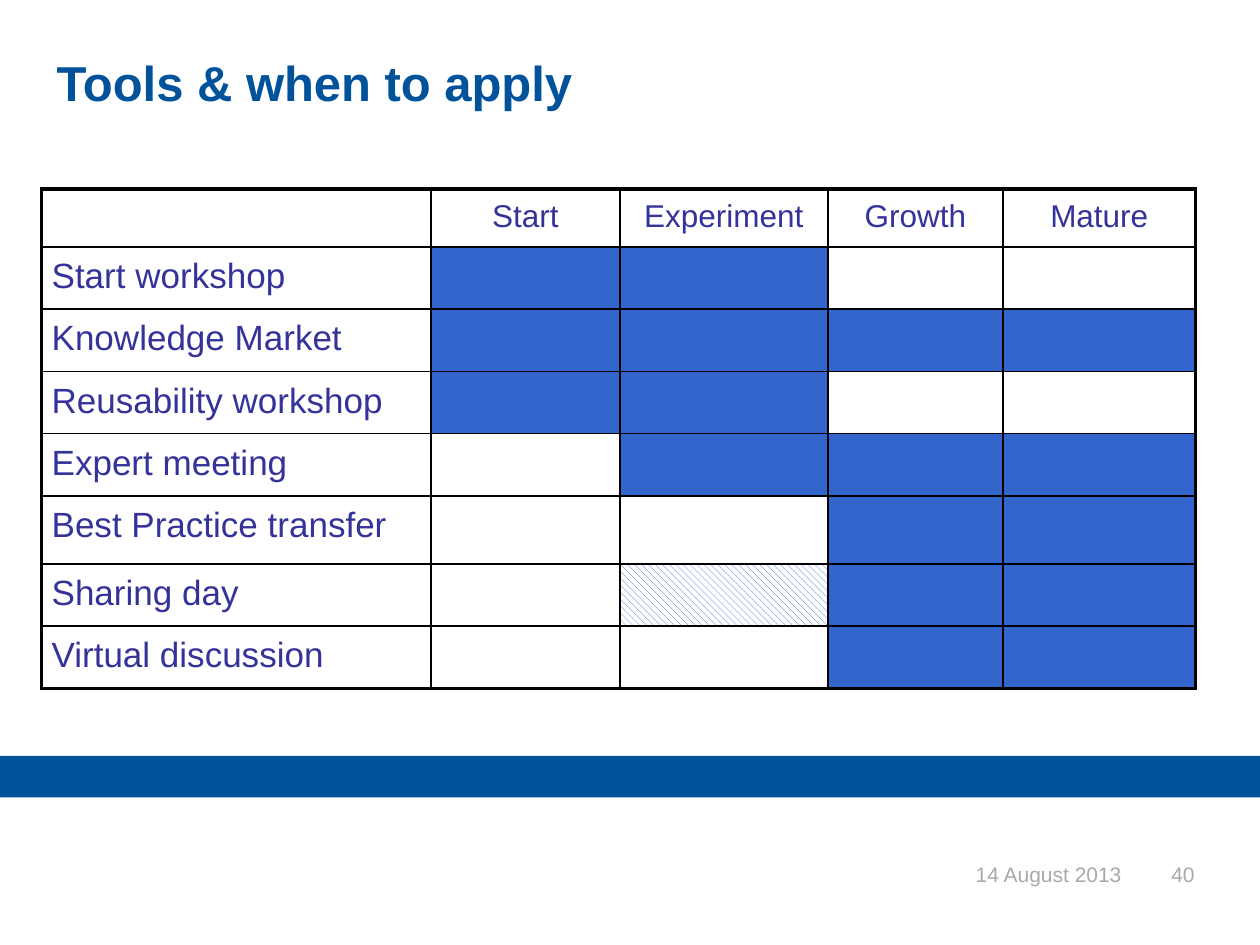
from lxml.etree import SubElement
from pptx import Presentation
from pptx.dml.color import RGBColor
from pptx.enum.dml import MSO_PATTERN
from pptx.enum.shapes import MSO_SHAPE
from pptx.enum.text import MSO_ANCHOR, MSO_AUTO_SIZE, PP_ALIGN
from pptx.oxml.ns import qn
from pptx.util import Inches, Pt

WIDTH, HEIGHT = 10, 7.5
FONT = "Arial"
COLORS = {
    "brand": "00529B",
    "footer": "A7A9AC",
    "label": "333399",
    "active": "3366CC",
    "paper": "FFFFFF",
    "border": "000000",
}
THIN, THICK = 1, 2.25

PHASES = ["Start", "Experiment", "Growth", "Mature"]
# One mark per phase: x = applies, / = applies partly, - = does not apply
TOOLS = {
    "Start workshop": "xx--",
    "Knowledge Market": "xxxx",
    "Reusability workshop": "xx--",
    "Expert meeting": "-xxx",
    "Best Practice transfer": "--xx",
    "Sharing day": "-/xx",
    "Virtual discussion": "--xx",
}
COLUMN_WIDTHS = [3.09, 1.5, 1.65, 1.39, 1.53]
HEADER_HEIGHT, ROW_HEIGHT = 0.46, 0.49
TALL_ROWS = {"Best Practice transfer": 0.54}


def color(name):
    return RGBColor.from_string(COLORS[name])


def inches(box):
    return [Inches(length) for length in box]


def write(frame, text, size, color_name, align=PP_ALIGN.LEFT, bold=False):
    frame.text = text
    para = frame.paragraphs[0]
    para.alignment = align
    font = para.runs[0].font
    font.name, font.size, font.bold = FONT, Pt(size), bold
    font.color.rgb = color(color_name)


def add_title(page, box, text):
    title = page.shapes.title
    title.left, title.top, title.width, title.height = inches(box)
    frame = title.text_frame
    frame.auto_size = MSO_AUTO_SIZE.NONE
    frame.vertical_anchor = MSO_ANCHOR.TOP
    write(frame, text, 28, "brand", bold=True)
    frame.paragraphs[0].line_spacing = 0.9


def add_band(page, box):
    band = page.shapes.add_shape(MSO_SHAPE.RECTANGLE, *inches(box))
    band.shadow.inherit = False
    band.fill.solid()
    band.fill.fore_color.rgb = color("brand")
    band.line.fill.background()


def add_footer_text(page, box, text):
    frame = page.shapes.add_textbox(*inches(box)).text_frame
    frame.word_wrap = True
    write(frame, text, 12, "footer", PP_ALIGN.RIGHT)


def set_borders(cell, widths):
    """Draw the left, right, top and bottom borders, given in points."""
    properties = cell._tc.get_or_add_tcPr()
    for side, width in zip(("lnL", "lnR", "lnT", "lnB"), widths):
        line = SubElement(properties, qn(f"a:{side}"), w=str(Pt(width)))
        fill = SubElement(line, qn("a:solidFill"))
        SubElement(fill, qn("a:srgbClr"), val=COLORS["border"])


def fill_cell(cell, mark):
    if mark == "x":
        cell.fill.solid()
        cell.fill.fore_color.rgb = color("active")
    elif mark == "/":
        cell.fill.patterned()
        cell.fill.pattern = MSO_PATTERN.WIDE_DOWNWARD_DIAGONAL
        cell.fill.fore_color.rgb = color("active")
        cell.fill.back_color.rgb = color("paper")
    else:
        cell.fill.background()


def add_phase_table(page, left, top):
    heights = [HEADER_HEIGHT] + [TALL_ROWS.get(tool, ROW_HEIGHT) for tool in TOOLS]
    box = left, top, sum(COLUMN_WIDTHS), sum(heights)
    table = page.shapes.add_table(
        len(heights), len(COLUMN_WIDTHS), *inches(box)).table
    table.first_row = table.horz_banding = False
    for column, width in zip(table.columns, COLUMN_WIDTHS):
        column.width = Inches(width)
    for row, height in zip(table.rows, heights):
        row.height = Inches(height)

    last_row, last_column = len(heights) - 1, len(COLUMN_WIDTHS) - 1
    marks = ["-" * len(PHASES), *TOOLS.values()]
    for i, row in enumerate(table.rows):
        for j, cell in enumerate(row.cells):
            cell.margin_left = cell.margin_right = Inches(0.08)
            cell.margin_top = cell.margin_bottom = Inches(0.08)
            outer = j == 0, j == last_column, i == 0, i == last_row
            set_borders(cell, [THICK if edge else THIN for edge in outer])
            fill_cell(cell, marks[i][j - 1] if j else "-")

    for j, phase in enumerate(PHASES, 1):
        write(table.cell(0, j).text_frame, phase, 18, "label", PP_ALIGN.CENTER)
    for i, tool in enumerate(TOOLS, 1):
        write(table.cell(i, 0).text_frame, tool, 20, "label")


def main():
    deck = Presentation()
    deck.slide_width, deck.slide_height = Inches(WIDTH), Inches(HEIGHT)
    page = deck.slides.add_slide(deck.slide_layouts[5])
    add_band(page, (0, 0.8 * HEIGHT, WIDTH, 0.33))
    footer_top = 6.79
    add_footer_text(page, (6.92, footer_top, 2.08, 0.5), "14 August 2013")
    add_footer_text(page, (9.08, footer_top, 0.5, 0.5), "40")
    add_title(page, (0.35, 0.42, 0.85 * WIDTH, 0.67), "Tools & when to apply")
    add_phase_table(page, 0.33, 0.2 * HEIGHT)
    deck.save("out.pptx")


if __name__ == "__main__":
    main()
